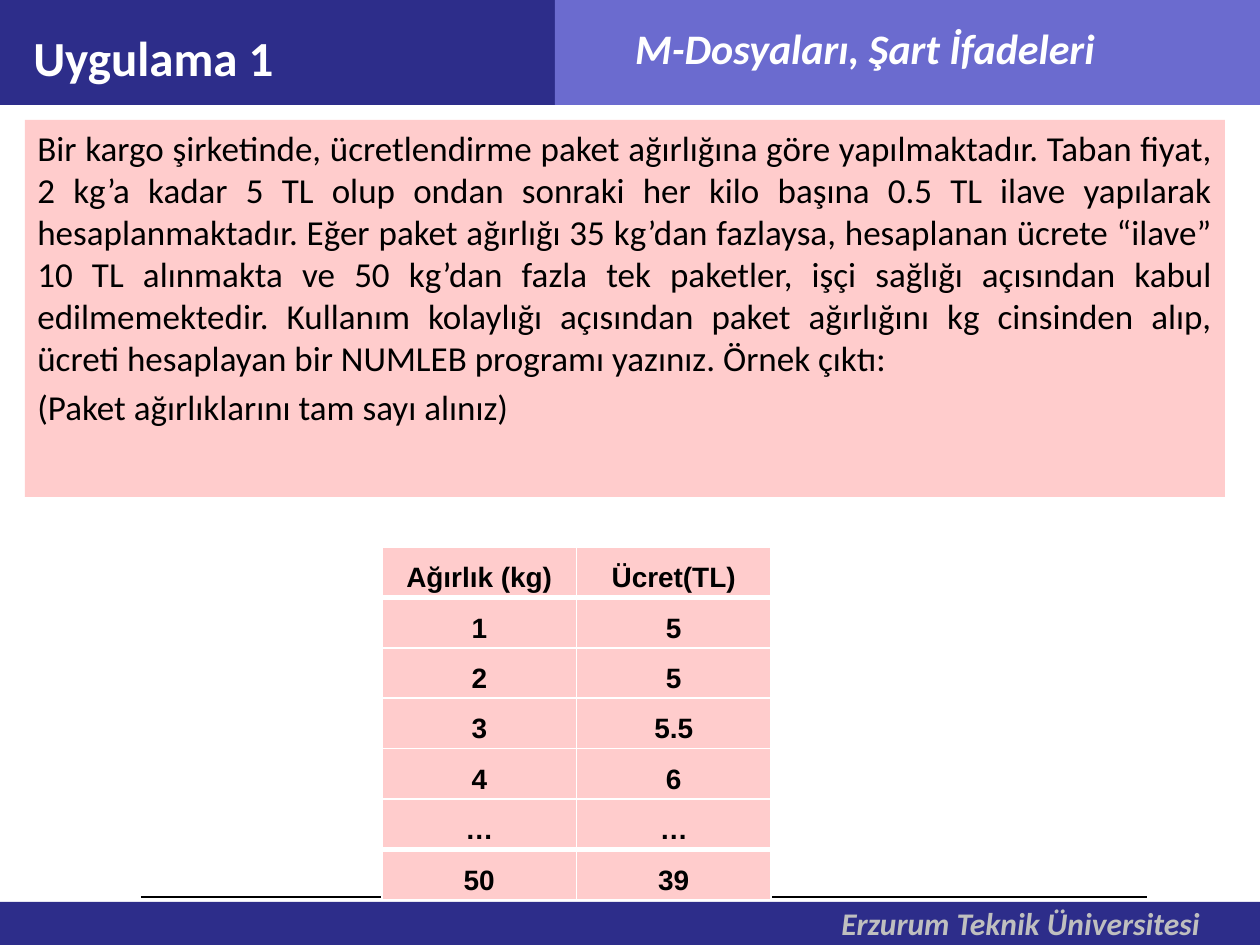
from dataclasses import dataclass

from lxml import etree
from pptx import Presentation
from pptx.dml.color import RGBColor
from pptx.enum import shapes, text
from pptx.oxml import ns
from pptx.util import Emu, Pt

SCALE = 914400 / 126  # EMU in one px
WIDTH, HEIGHT = 1260, 945


@dataclass(frozen=True)
class Theme:
    navy: str = "2D2D8A"
    violet: str = "6B6BCF"
    pink: str = "FFCCCC"
    white: str = "FFFFFF"
    black: str = "000000"
    grey: str = "BFBFBF"
    font: str = "Calibri"
    table_font: str = "Arial"
    title: int = 28
    heading: int = 24
    body: int = 20
    footer: int = 18
    table: int = 16


THEME = Theme()

QUESTION = [
    "Bir kargo şirketinde, ücretlendirme paket ağırlığına göre yapılmaktadır. "
    "Taban fiyat, 2 kg’a kadar 5 TL olup ondan sonraki her kilo başına 0.5 TL "
    "ilave yapılarak hesaplanmaktadır. Eğer paket ağırlığı 35 kg’dan fazlaysa, "
    "hesaplanan ücrete “ilave” 10 TL alınmakta ve 50 kg’dan fazla tek paketler, "
    "işçi sağlığı açısından kabul edilmemektedir. Kullanım kolaylığı açısından "
    "paket ağırlığını kg cinsinden alıp, ücreti hesaplayan bir NUMLEB programı "
    "yazınız. Örnek çıktı:",
    "(Paket ağırlıklarını tam sayı alınız)",
]
FEES = [
    ("Ağırlık (kg)", "Ücret(TL)"),
    ("1", "5"),
    ("2", "5"),
    ("3", "5.5"),
    ("4", "6"),
    ("…", "…"),
    ("50", "39"),
]


def px(*lengths):
    return [Emu(round(length * SCALE)) for length in lengths]


def style(frame, size, color, font=THEME.font, bold=False, italic=False, align=None):
    for para in frame.paragraphs:
        para.alignment = align
        for span in para.runs:
            span.font.name, span.font.size = font, Pt(size)
            span.font.bold, span.font.italic = bold, italic
            span.font.color.rgb = RGBColor.from_string(color)


def add_band(page, box, color):
    band = page.shapes.add_shape(shapes.MSO_SHAPE.RECTANGLE, *px(*box))
    band.shadow.inherit = False
    band.fill.solid()
    band.fill.fore_color.rgb = RGBColor.from_string(color)
    band.line.fill.background()
    return band


def add_label(page, box, words, size, color, **look):
    label = page.shapes.add_textbox(*px(*box))
    frame = label.text_frame
    frame.word_wrap = True
    frame.text = words
    style(frame, size, color, bold=True, **look)
    return frame


def add_header(page, box):
    left, top, width, height = box
    add_band(page, (left, top, 640, height), THEME.navy)
    add_band(page, (left + 555, top, width - 555, height), THEME.violet)
    add_label(page, (left + 471, top + 16, 788, 63), "M-Dosyaları, Şart İfadeleri",
              THEME.heading, THEME.white, italic=True, align=text.PP_ALIGN.CENTER)
    title = add_label(page, (left + 21, top + 21, 593, 66), "Uygulama 1",
                      THEME.title, THEME.white)
    title.vertical_anchor = text.MSO_ANCHOR.MIDDLE
    title.margin_bottom = 0


def add_footer(page, box):
    left, top, width, height = box
    add_band(page, box, THEME.navy)
    add_label(page, (left + 829, top - 4, width - 829, height + 4),
              "Erzurum Teknik Üniversitesi", THEME.footer, THEME.grey, italic=True)
    # Rule just above the footer
    rule = page.shapes.add_connector(
        shapes.MSO_CONNECTOR.STRAIGHT,
        *px(left + 141, top - 5, left + 1147, top - 5))
    rule.line.color.rgb = RGBColor.from_string(THEME.black)
    rule.line.width = Pt(1.5)
    etree.SubElement(rule._element.spPr, ns.qn("a:effectLst"))


def add_question(page, box):
    frame = add_band(page, box, THEME.pink).text_frame
    frame.word_wrap = True
    frame.vertical_anchor = text.MSO_ANCHOR.TOP
    frame.text = "\n".join(QUESTION)
    style(frame, THEME.body, THEME.black, align=text.PP_ALIGN.JUSTIFY)
    for para in frame.paragraphs:
        para.space_before = Pt(THEME.body * 0.2)


def set_borders(cell, widths):
    properties = cell._tc.get_or_add_tcPr()
    for index, (side, width) in enumerate(widths.items()):
        line = etree.Element(ns.qn(f"a:ln{side}"), w=str(Pt(width)))
        fill = etree.SubElement(line, ns.qn("a:solidFill"))
        etree.SubElement(fill, ns.qn("a:srgbClr"), val=THEME.white)
        properties.insert(index, line)


def add_fee_table(page, box):
    table = page.shapes.add_table(len(FEES), len(FEES[0]), *px(*box)).table
    table.horz_banding = False
    thick_edges = (1, len(FEES) - 1)  # below the header, above the last row
    for row, values in enumerate(FEES):
        top, bottom = (3 if edge in thick_edges else 1 for edge in (row, row + 1))
        for column, value in enumerate(values):
            cell = table.cell(row, column)
            cell.fill.solid()
            cell.fill.fore_color.rgb = RGBColor.from_string(THEME.pink)
            cell.margin_left, cell.margin_right = px(9, 9)
            cell.margin_top = cell.margin_bottom = 0
            cell.text_frame.text = value
            style(cell.text_frame, THEME.table, THEME.black, THEME.table_font,
                  bold=True, align=text.PP_ALIGN.CENTER)
            cell.text_frame.paragraphs[0].line_spacing = 1.5
            set_borders(cell, {"L": 1, "R": 1, "T": top, "B": bottom})


def main():
    deck = Presentation()
    deck.slide_width, deck.slide_height = px(WIDTH, HEIGHT)
    page = deck.slides.add_slide(deck.slide_layouts[6])
    add_header(page, (0, 0, WIDTH, 105))
    add_footer(page, (0, 902, WIDTH, 43))
    add_question(page, (25, 120, 1200, 377))
    add_fee_table(page, (382, 547, 389, 350))
    deck.save("out.pptx")


if __name__ == "__main__":
    main()
